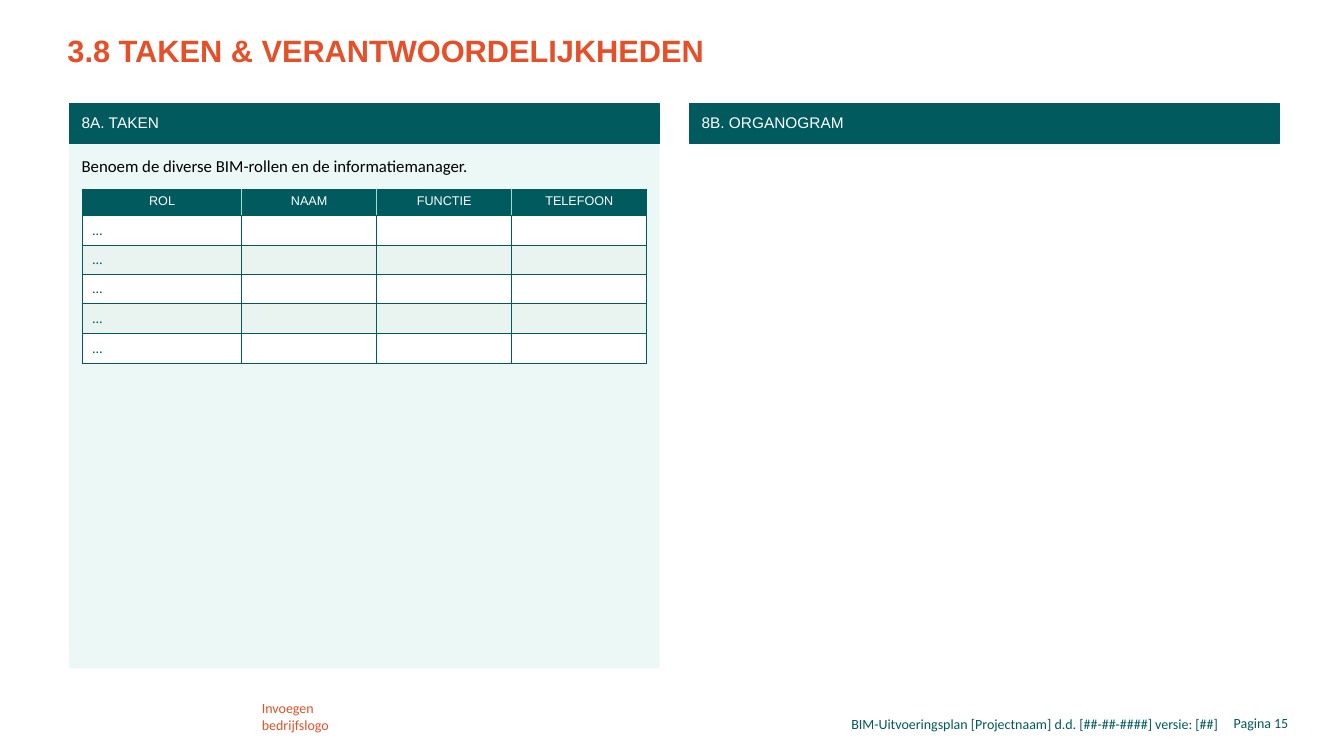
from lxml import etree
from pptx import Presentation
from pptx.dml.color import RGBColor
from pptx.enum.shapes import MSO_SHAPE
from pptx.enum.text import MSO_ANCHOR, PP_ALIGN
from pptx.oxml.ns import qn
from pptx.util import Pt

RECT = MSO_SHAPE.RECTANGLE
TOP, MIDDLE = MSO_ANCHOR.TOP, MSO_ANCHOR.MIDDLE
LEFT, CENTER, RIGHT = PP_ALIGN.LEFT, PP_ALIGN.CENTER, PP_ALIGN.RIGHT
TEAL, MINT, PALE, ORANGE = "005A5E", "9DDED3", "EBF8F6", "E55028"
WHITE, BLACK, BAND = "FFFFFF", "000000", "E9F3F0"
color = RGBColor.from_string


def write(frame, lines, size, font, hue, align=LEFT, bold=False):
    for i, line in enumerate(lines):
        para = frame.paragraphs[0] if i == 0 else frame.add_paragraph()
        para.alignment = align
        run = para.add_run()
        run.text = line
        run.font.size = Pt(size)
        run.font.name = font
        run.font.bold = bold
        run.font.color.rgb = color(hue)


def edge(cell, side, hue, width):
    """Draw one cell border; call in the order L, R, T, B, before the fill."""
    line = etree.SubElement(cell._tc.get_or_add_tcPr(), qn("a:ln" + side), w=str(Pt(width)))
    fill = etree.SubElement(line, qn("a:solidFill"))
    etree.SubElement(fill, qn("a:srgbClr"), val=hue)


deck = Presentation()
deck.slide_width, deck.slide_height = Pt(960), Pt(540)
slide = deck.slides.add_slide(deck.slide_layouts[6])
shapes = slide.shapes

# Panel and section bars
panel = shapes.add_shape(RECT, Pt(49.2), Pt(103), Pt(421.9), Pt(374.4))
panel.shadow.inherit = False
panel.fill.solid()
panel.fill.fore_color.rgb = color(PALE)
panel.line.fill.background()

for left, label in [(49.7, "8A. TAKEN"), (492.5, "8B. ORGANOGRAM")]:
    bar = shapes.add_shape(RECT, Pt(left), Pt(74.2), Pt(421.2), Pt(28.1))
    bar.shadow.inherit = False
    bar.fill.solid()
    bar.fill.fore_color.rgb = color(TEAL)
    bar.line.color.rgb = color(TEAL)
    bar.line.width = Pt(0.75)
    frame = bar.text_frame
    frame.margin_left = Pt(8.6)
    frame.vertical_anchor = MIDDLE
    write(frame, [label], 11, "Arial", WHITE)
    frame.paragraphs[0].line_spacing = 0.9

# Title, intro and footer: place, insets (left, top, right), anchor, text style
texts = [
    ((48.2, 19.4, 605.5, 33.8), (0, 3.6, 7.2), TOP,
     ["3.8 TAKEN & VERANTWOORDELIJKHEDEN"], 22, "Arial", ORANGE, LEFT, True),
    ((49.7, 103, 421.2, 26.6), (8.6, 8.6, 8.6), TOP,
     ["Benoem de diverse BIM-rollen en de informatiemanager."], 12, "Calibri", BLACK),
    ((180, 496.1, 82.1, 31.7), (7.2, 3.6, 7.2), TOP,
     ["Invoegen", "bedrijfslogo"], 10, "Calibri", ORANGE),
    ((487.4, 507.6, 389.5, 19.4), (7.2, 3.6, 7.2), TOP,
     ["BIM-Uitvoeringsplan [Projectnaam] d.d. [##-##-####] versie: [##]"],
     10, "Calibri", TEAL, RIGHT),
    ((869, 506.9, 38.9, 19.4), (0, 3.6, 0), TOP, ["Pagina"], 10, "Calibri", TEAL, RIGHT),
    ((907.9, 506.2, 31.7, 20.2), (0, 3.6, 0), MIDDLE, [" 15"], 10, "Calibri", TEAL),
]
for place, inset, anchor, *style in texts:
    frame = shapes.add_textbox(*map(Pt, place)).text_frame
    frame.word_wrap = True
    frame.margin_left, frame.margin_top, frame.margin_right = map(Pt, inset)
    frame.vertical_anchor = anchor
    write(frame, *style)

# Role tables: column heads above, rows to fill in below
widths = [113.6, 96.5, 96.5, 96.5]
heads = ["ROL", "NAAM", "FUNCTIE", "TELEFOON"]
last = len(heads) - 1
tables = [
    (135.1, [18.9], [heads]),
    (154.2, [20.8, 20.8, 20.8, 21.6, 21.6], [["…", "", "", ""]] * 5),
]
for top, heights, rows in tables:
    head = rows[0] is heads
    frame = shapes.add_table(len(rows), len(heads), Pt(59), Pt(top),
                             Pt(sum(widths)), Pt(sum(heights)))
    table = frame.table
    table.first_row = table.horz_banding = False
    for col, width in zip(table.columns, widths):
        col.width = Pt(width)
    for r, (height, row) in enumerate(zip(heights, rows)):
        table.rows[r].height = Pt(height)
        for c, word in enumerate(row):
            cell = table.cell(r, c)
            inner = {"L": c > 0, "R": c < last, "T": False, "B": False}
            for side, inside in inner.items():
                light = head and inside
                edge(cell, side, MINT if light else TEAL, 1 if light else 0.75)
            cell.fill.solid()
            cell.fill.fore_color.rgb = color(TEAL if head else BAND if r % 2 else WHITE)
            if head:
                write(cell.text_frame, [word], 9, "Arial", WHITE, CENTER)
                continue
            cell.vertical_anchor = MIDDLE
            cell.margin_top = cell.margin_bottom = Pt(4)
            if word:
                write(cell.text_frame, [word], 10, "Calibri", TEAL)
            else:
                para = cell.text_frame.paragraphs[0]
                etree.SubElement(para._p, qn("a:endParaRPr"), sz="1000")

deck.save("out.pptx")
